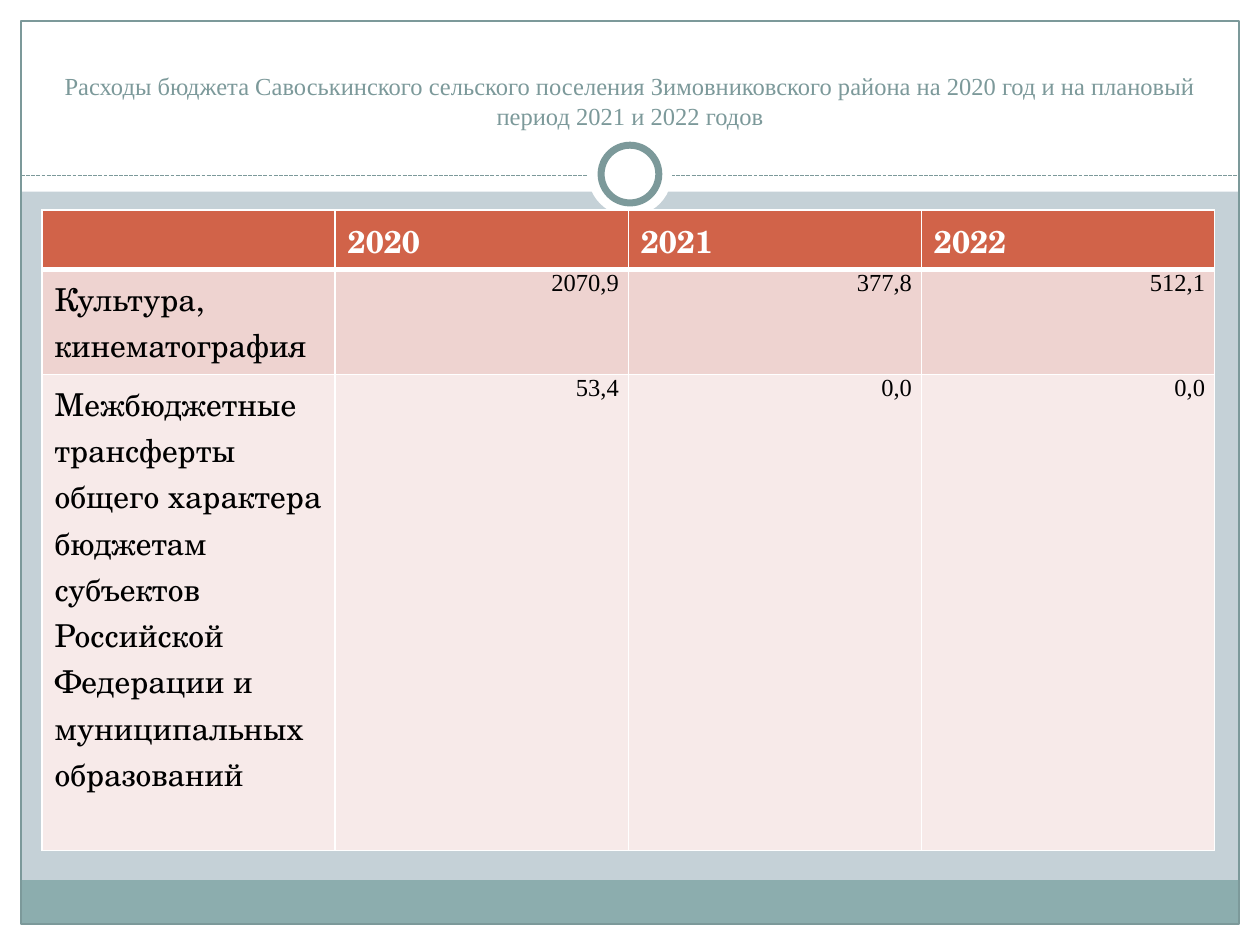
"""Build a slide with a budget expenditure table for 2020 to 2022."""

from dataclasses import dataclass

from lxml import etree
from pptx import Presentation
from pptx.dml.color import RGBColor
from pptx.enum.dml import MSO_LINE
from pptx.enum.shapes import MSO_CONNECTOR, MSO_SHAPE
from pptx.enum.text import MSO_ANCHOR, PP_ALIGN
from pptx.oxml.ns import qn
from pptx.util import Pt

RECTANGLE, ELLIPSE = MSO_SHAPE.RECTANGLE, MSO_SHAPE.OVAL
STRAIGHT, DASH = MSO_CONNECTOR.STRAIGHT, MSO_LINE.SQUARE_DOT
LEFT, CENTER, RIGHT = PP_ALIGN.LEFT, PP_ALIGN.CENTER, PP_ALIGN.RIGHT
BOTTOM = MSO_ANCHOR.BOTTOM
WIDTH, HEIGHT, MARGIN = 720, 540, 12


@dataclass(frozen=True)
class Theme:
    background: str = "C5D1D7"
    white: str = "FFFFFF"
    black: str = "000000"
    accent: str = "7C999A"
    footer: str = "8CADAE"
    header: str = "D16349"
    bands: tuple[str, ...] = ("EED3D0", "F7EAE9")
    serif: str = "Times New Roman"
    school: str = "TeX Gyre Schola"
    small: float = 14
    large: float = 18


@dataclass(frozen=True)
class Panel:
    left: float
    top: float
    width: float
    height: float
    fill: str | None = None
    line: str | None = None
    weight: float = 0.75
    kind: MSO_SHAPE = RECTANGLE


@dataclass(frozen=True)
class Expense:
    name: str
    amounts: tuple[str, ...]
    height: float


THEME = Theme()
TITLE = (
    "Расходы бюджета Савоськинского сельского поселения Зимовниковского района "
    "на 2020 год и на плановый период 2021 и 2022 годов"
)
YEARS = ("2020", "2021", "2022")
EXPENSES = (
    Expense("Культура, кинематография", ("2070,9", "377,8", "512,1"), 60),
    Expense(
        "Межбюджетные трансферты общего характера бюджетам субъектов "
        "Российской Федерации и муниципальных образований",
        ("53,4", "0,0", "0,0"),
        272,
    ),
)
INNER_WIDTH, INNER_HEIGHT = WIDTH - 2 * MARGIN, HEIGHT - 2 * MARGIN
FRAME_PANELS = (
    Panel(0, HEIGHT - MARGIN, WIDTH, MARGIN, THEME.white),
    Panel(0, 0, WIDTH, 109.5, THEME.white),
    Panel(0, 0, MARGIN, HEIGHT, THEME.white),
    Panel(WIDTH - MARGIN, 0, MARGIN, HEIGHT, THEME.white),
    Panel(MARGIN, 503, INNER_WIDTH, 25, THEME.footer),
    Panel(MARGIN, MARGIN, INNER_WIDTH, INNER_HEIGHT, line=THEME.accent),
)
RING_PANELS = (
    Panel(336, 75.5, 48, 48, THEME.white, kind=ELLIPSE),
    Panel(343.5, 83, 33, 33, THEME.white, THEME.accent, 4, ELLIPSE),
)


def color(value: str) -> RGBColor:
    return RGBColor.from_string(value)


def draw_panel(page, panel: Panel) -> None:
    box = page.shapes.add_shape(
        panel.kind, Pt(panel.left), Pt(panel.top), Pt(panel.width), Pt(panel.height)
    )
    box.shadow.inherit = False
    if panel.fill:
        box.fill.solid()
        box.fill.fore_color.rgb = color(panel.fill)
    else:
        box.fill.background()
    if panel.line:
        box.line.color.rgb = color(panel.line)
        box.line.width = Pt(panel.weight)
    else:
        box.line.fill.background()


def draw_divider(page, top: float) -> None:
    divider = page.shapes.add_connector(
        STRAIGHT, Pt(MARGIN), Pt(top), Pt(WIDTH - MARGIN), Pt(top)
    )
    divider.line.color.rgb = color(THEME.accent)
    divider.line.width = Pt(0.75)
    divider.line.dash_style = DASH
    etree.SubElement(divider._element.spPr, qn("a:effectLst"))


def write_text(frame, text: str, *, font: str = THEME.school, size: float = THEME.large,
               ink: str = THEME.black, bold: bool = False, align: PP_ALIGN = LEFT) -> None:
    para = frame.paragraphs[0]
    para.alignment = align
    span = para.add_run()
    span.text = text
    span.font.name = font
    span.font.size = Pt(size)
    span.font.bold = bold
    span.font.color.rgb = color(ink)


def draw_title(page) -> None:
    box = page.shapes.add_textbox(Pt(24), Pt(18), Pt(672), Pt(60))
    box.text_frame.word_wrap = True
    box.text_frame.vertical_anchor = BOTTOM
    write_text(box.text_frame, TITLE, font=THEME.serif, size=THEME.small,
               ink=THEME.accent, align=CENTER)


def style_cell(cell, fill: str, top: float = 1, bottom: float = 1) -> None:
    properties = cell._tc.get_or_add_tcPr()
    for side, weight in (("L", 1), ("R", 1), ("T", top), ("B", bottom)):
        border = etree.SubElement(properties, qn(f"a:ln{side}"), w=str(Pt(weight)))
        solid = etree.SubElement(border, qn("a:solidFill"))
        etree.SubElement(solid, qn("a:srgbClr"), val=THEME.white)
    cell.fill.solid()
    cell.fill.fore_color.rgb = color(fill)


def write_amount(cell, amount: str) -> None:
    cell.margin_left = cell.margin_right = Pt(5.4)
    cell.margin_top = cell.margin_bottom = Pt(0)
    write_text(cell.text_frame, amount, font=THEME.serif, size=THEME.small, align=RIGHT)


def draw_table(page) -> None:
    heights = (34, *(expense.height for expense in EXPENSES))
    columns = len(YEARS) + 1
    table = page.shapes.add_table(
        len(heights), columns, Pt(24), Pt(120), Pt(167.5 * columns), Pt(sum(heights))
    ).table
    for row, height in zip(table.rows, heights):
        row.height = Pt(height)
    for cell in table.rows[0].cells:
        style_cell(cell, THEME.header, bottom=3)
    for column, year in enumerate(YEARS, 1):
        write_text(table.cell(0, column).text_frame, year, ink=THEME.white, bold=True)
    for index, (expense, band) in enumerate(zip(EXPENSES, THEME.bands), 1):
        for cell in table.rows[index].cells:
            style_cell(cell, band, top=3 if index == 1 else 1)
        write_text(table.cell(index, 0).text_frame, expense.name)
        for column, amount in enumerate(expense.amounts, 1):
            write_amount(table.cell(index, column), amount)


def main() -> None:
    deck = Presentation()
    deck.slide_width, deck.slide_height = Pt(WIDTH), Pt(HEIGHT)
    page = deck.slides.add_slide(deck.slide_layouts[6])
    page.background.fill.solid()
    page.background.fill.fore_color.rgb = color(THEME.background)
    for panel in FRAME_PANELS:
        draw_panel(page, panel)
    draw_divider(page, 100.5)
    for panel in RING_PANELS:
        draw_panel(page, panel)
    draw_title(page)
    draw_table(page)
    deck.save("out.pptx")


if __name__ == "__main__":
    main()
